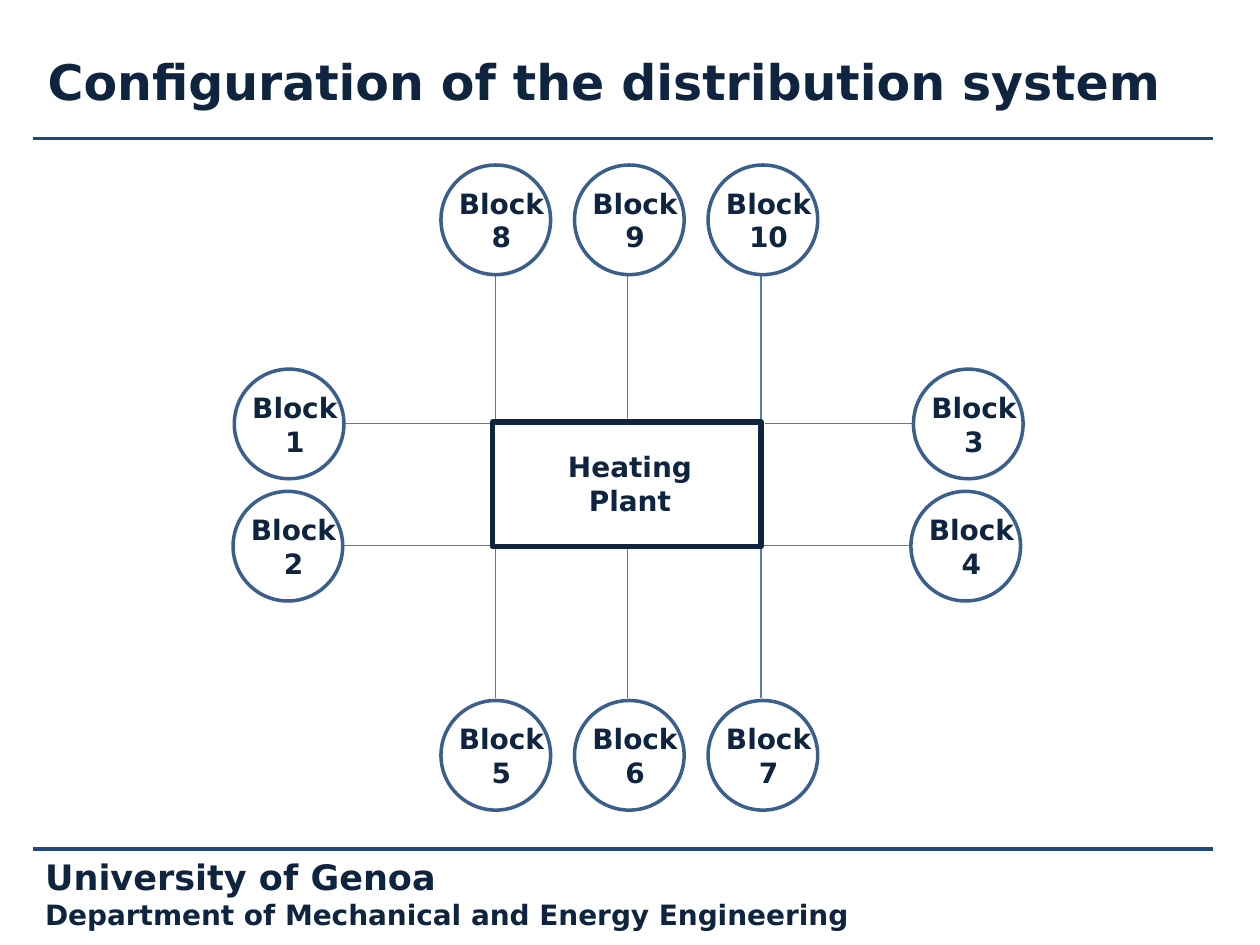
from dataclasses import dataclass

from lxml.etree import SubElement
from pptx import Presentation
from pptx.dml.color import RGBColor
from pptx.enum.shapes import MSO_CONNECTOR as Connector, MSO_SHAPE as Shape
from pptx.enum.text import MSO_ANCHOR as Anchor, PP_ALIGN as Align
from pptx.oxml.ns import qn
from pptx.slide import Slide
from pptx.util import Inches, Pt

FONT = "DejaVu Sans"
NAVY, RULE, RING, PIPE = "0F243E", "1F497D", "3A5F8C", "4B7EBC"
DIAMETER = 0.87
PIPE_LENGTH = 1.18
COLUMNS = (3.5, 4.56, 5.62)
PIPE_COLUMNS = (3.93, 4.98, 6.04)


@dataclass(frozen=True)
class Block:
    number: int
    left: float
    top: float


@dataclass(frozen=True)
class Pipe:
    x: float
    y: float
    vertical: bool = False


@dataclass(frozen=True)
class Line:
    text: str
    size: float


def color(value: str) -> RGBColor:
    return RGBColor.from_string(value)


def add_line(slide: Slide, x1: float, y1: float, x2: float, y2: float,
             stroke: str, width: float) -> None:
    line = slide.shapes.add_connector(
        Connector.STRAIGHT, Inches(x1), Inches(y1), Inches(x2), Inches(y2))
    line.line.color.rgb = color(stroke)
    line.line.width = Pt(width)
    SubElement(line._element.spPr, qn("a:effectLst"))


def add_outline(slide: Slide, kind: Shape, left: float, top: float,
                width: float, height: float, stroke: str, weight: float) -> None:
    outline = slide.shapes.add_shape(
        kind, Inches(left), Inches(top), Inches(width), Inches(height))
    outline.shadow.inherit = False
    outline.fill.background()
    outline.line.color.rgb = color(stroke)
    outline.line.width = Pt(weight)


def add_text(slide: Slide, left: float, top: float, width: float, height: float,
             lines: list[Line], align: Align = Align.LEFT,
             anchor: Anchor = Anchor.TOP) -> None:
    frame = slide.shapes.add_textbox(
        Inches(left), Inches(top), Inches(width), Inches(height)).text_frame
    frame.word_wrap = True
    frame.vertical_anchor = anchor
    for index, line in enumerate(lines):
        paragraph = frame.add_paragraph() if index else frame.paragraphs[0]
        paragraph.alignment = align
        run = paragraph.add_run()
        run.text = line.text
        run.font.name = FONT
        run.font.size = Pt(line.size)
        run.font.bold = True
        run.font.color.rgb = color(NAVY)


def add_block(slide: Slide, block: Block) -> None:
    add_outline(slide, Shape.OVAL, block.left, block.top,
                DIAMETER, DIAMETER, RING, 2)
    add_text(slide, block.left - 0.07, block.top + 0.12, 1.1, 0.64,
             [Line("Block", 16), Line(str(block.number), 16)], Align.CENTER)


def add_pipe(slide: Slide, pipe: Pipe) -> None:
    across, down = (0, PIPE_LENGTH) if pipe.vertical else (PIPE_LENGTH, 0)
    add_line(slide, pipe.x, pipe.y, pipe.x + across, pipe.y + down, PIPE, 0.75)


def main() -> None:
    deck = Presentation()
    deck.slide_width, deck.slide_height = Inches(10), Inches(7.5)
    slide = deck.slides.add_slide(deck.slide_layouts[6])

    for rule_y in (1.1, 6.74):
        add_line(slide, 0.26, rule_y, 9.63, rule_y, RULE, 2)
    add_text(slide, 0.26, 6.84, 6.63, 0.5,
             [Line("University of Genoa", 20),
              Line("Department of Mechanical and Energy Engineering", 16)],
             anchor=Anchor.MIDDLE)
    add_text(slide, 0.28, 0.29, 9.35, 0.71,
             [Line("Configuration of the distribution system", 28)],
             anchor=Anchor.MIDDLE)
    add_text(slide, 4.23, 3.52, 1.54, 0.64, [Line("Heating Plant", 16)],
             Align.CENTER)

    side_blocks = [Block(1, 1.86, 2.93), Block(2, 1.85, 3.9),
                   Block(3, 7.25, 2.93), Block(4, 7.23, 3.9)]
    row_blocks = [Block(first + index, left, top)
                  for first, top in ((5, 5.56), (8, 1.31))
                  for index, left in enumerate(COLUMNS)]
    side_pipes = [Pipe(2.73, 3.36), Pipe(2.73, 4.33),
                  Pipe(6.07, 3.36), Pipe(6.05, 4.33)]
    row_pipes = [Pipe(x, y, vertical=True)
                 for y in (4.36, 2.17) for x in PIPE_COLUMNS]

    for pipe in side_pipes + row_pipes:
        add_pipe(slide, pipe)
    for block in side_blocks + row_blocks:
        add_block(slide, block)
    add_outline(slide, Shape.RECTANGLE, 3.91, 3.35, 2.13, 0.99, NAVY, 3)

    deck.save("out.pptx")


if __name__ == "__main__":
    main()
